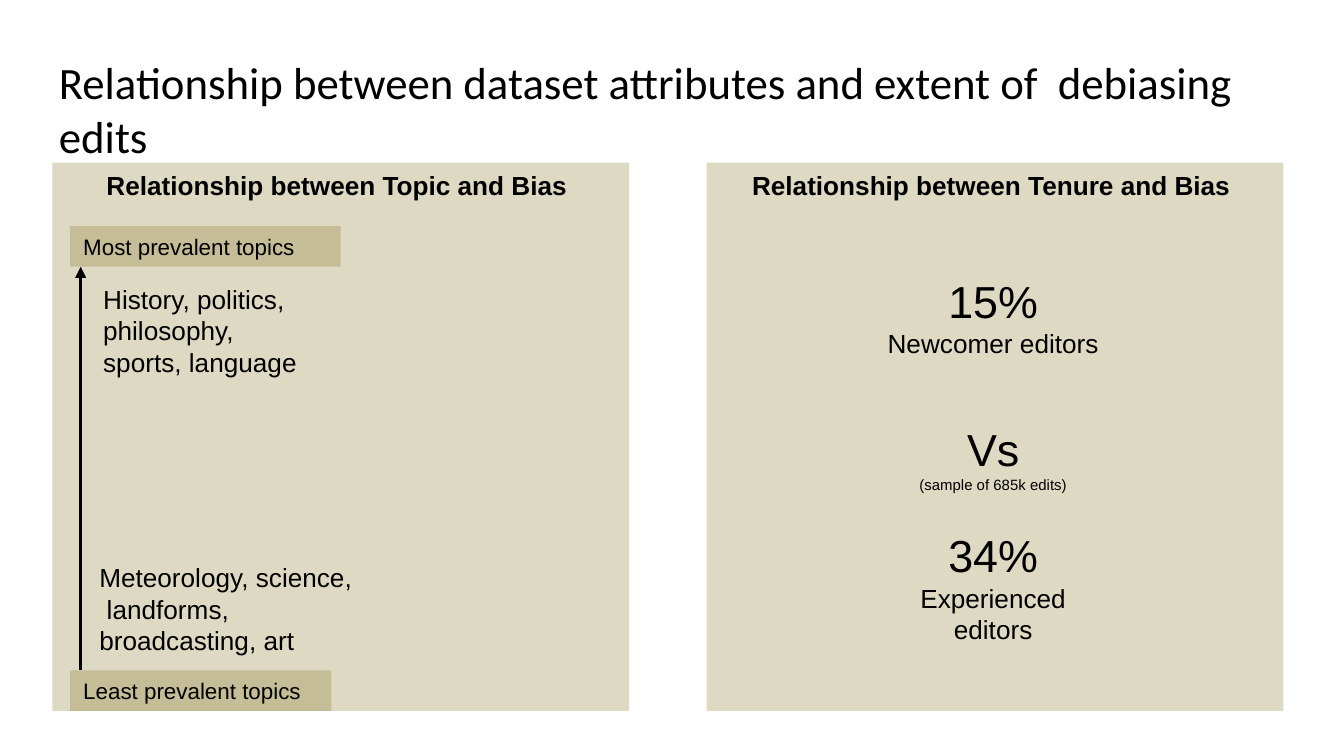
from dataclasses import dataclass

import pptx
import pptx.dml.color
import pptx.enum.dml
import pptx.enum.shapes
import pptx.enum.text
import pptx.oxml
import pptx.util
from lxml import etree
from pptx.oxml import ns

Pt = pptx.util.Pt
ALIGN = pptx.enum.text.PP_ALIGN
ANCHOR = pptx.enum.text.MSO_ANCHOR


@dataclass(frozen=True)
class Theme:
    ink: str = "000000"
    panel: str = "DDD9C3"
    label: str = "C4BD97"
    title_font: str = "Calibri"
    body_font: str = "Arial"
    large: float = 24
    body: float = 14
    small: float = 12
    note: float = 8


@dataclass(frozen=True)
class Box:
    """A rectangle in points."""
    left: float
    top: float
    width: float
    height: float

    def lengths(self) -> tuple:
        return Pt(self.left), Pt(self.top), Pt(self.width), Pt(self.height)


@dataclass(frozen=True)
class Line:
    text: str
    size: float
    bold: bool = False
    indent: float = 0


@dataclass(frozen=True)
class Block:
    box: Box
    lines: tuple[Line, ...]
    fill: str | None = None
    align: ALIGN = ALIGN.LEFT


THEME = Theme()
PANEL_TOP, PANEL_WIDTH, PANEL_HEIGHT = 87.12, 309, 293.76
TOPIC_LEFT, TENURE_LEFT = 28, 378.5
LABEL_LEFT, LABEL_HEIGHT = 37.5, 21.8
MOST_TOP = 121.1
LEAST_TOP = PANEL_TOP + PANEL_HEIGHT - LABEL_HEIGHT
ARROW_X = 43.2


def color(value: str) -> pptx.dml.color.RGBColor:
    return pptx.dml.color.RGBColor.from_string(value)


def write(frame, lines: tuple[Line, ...], align: ALIGN, font: str) -> None:
    frame.word_wrap = True
    for index, line in enumerate(lines):
        paragraph = frame.paragraphs[0] if index == 0 else frame.add_paragraph()
        paragraph.text = line.text
        paragraph.alignment = align
        if line.indent:
            paragraph._p.get_or_add_pPr().set("marL", str(Pt(line.indent)))
        paragraph.font.name = font
        paragraph.font.size = Pt(line.size)
        paragraph.font.bold = line.bold
        paragraph.font.color.rgb = color(THEME.ink)


def add_block(slide, block: Block):
    """Draw text, on a filled rectangle if the block has a fill."""
    if block.fill:
        shape = slide.shapes.add_shape(
            pptx.enum.shapes.MSO_SHAPE.RECTANGLE, *block.box.lengths())
        shape.shadow.inherit = False
        shape.fill.solid()
        shape.fill.fore_color.rgb = color(block.fill)
        shape.line.fill.background()
    else:
        shape = slide.shapes.add_textbox(*block.box.lengths())
    shape.text_frame.vertical_anchor = ANCHOR.TOP
    write(shape.text_frame, block.lines, block.align, THEME.body_font)
    return shape


def add_panel(slide, left: float, heading: str) -> None:
    box = Box(left, PANEL_TOP, PANEL_WIDTH, PANEL_HEIGHT)
    panel = add_block(slide, Block(
        box, (Line(heading, THEME.body, bold=True),), THEME.panel, ALIGN.CENTER))
    panel.text_frame.margin_right = Pt(11)


def add_label(slide, top: float, width: float, text: str) -> None:
    add_block(slide, Block(Box(LABEL_LEFT, top, width, LABEL_HEIGHT),
                           (Line(text, THEME.small),), THEME.label))


def add_figure(slide, top: float, height: float, figure: str, caption: Line) -> None:
    add_block(slide, Block(Box(463.7, top, 136.8, height),
                           (Line(figure, THEME.large), caption),
                           align=ALIGN.CENTER))


def add_arrow(slide, x: float, start: float, end: float) -> None:
    arrow = slide.shapes.add_connector(
        pptx.enum.shapes.MSO_CONNECTOR.STRAIGHT, Pt(x), Pt(start), Pt(x), Pt(end))
    arrow.line.color.rgb = color(THEME.ink)
    arrow.line.width = Pt(1.5)
    etree.SubElement(arrow.line._get_or_add_ln(), ns.qn("a:tailEnd"), type="triangle")
    etree.SubElement(arrow._element.spPr, ns.qn("a:effectLst"))


def add_title(slide, text: str) -> None:
    title = slide.shapes.add_textbox(*Box(24.5, 35.3, 671, 45.4).lengths())
    frame = title.text_frame
    frame.margin_left = frame.margin_right = Pt(7.2)
    frame.margin_top = frame.margin_bottom = Pt(7.2)
    frame.vertical_anchor = ANCHOR.MIDDLE
    write(frame, (Line(text, THEME.large),), ALIGN.LEFT, THEME.title_font)


def main() -> None:
    presentation = pptx.Presentation()
    presentation.slide_width, presentation.slide_height = Pt(720), Pt(405)
    slide = presentation.slides.add_slide(presentation.slide_layouts[6])

    add_panel(slide, TOPIC_LEFT, "Relationship between Topic and Bias")
    add_title(slide, "Relationship between dataset attributes and extent of  debiasing edits")
    add_arrow(slide, ARROW_X, LEAST_TOP, MOST_TOP + LABEL_HEIGHT)
    add_label(slide, LEAST_TOP, 140, "Least prevalent topics")
    add_label(slide, MOST_TOP, 145, "Most prevalent topics")
    add_block(slide, Block(Box(48.2, 148.3, 283.7, 58.3), (
        Line("History, politics,", THEME.body),
        Line("philosophy,", THEME.body),
        Line("sports, language", THEME.body))))
    add_block(slide, Block(Box(46.1, 297.4, 151.9, 58.3), (
        Line("Meteorology, science,", THEME.body),
        Line("landforms,", THEME.body, indent=4),
        Line("broadcasting, art", THEME.body))))

    add_panel(slide, TENURE_LEFT, "Relationship between Tenure and Bias")
    add_figure(slide, 143.3, 53.3, "15%", Line("Newcomer editors", THEME.body))
    add_figure(slide, 279.4, 70.6, "34%", Line("Experienced editors", THEME.body))
    add_figure(slide, 222.5, 46, "Vs", Line("(sample of 685k edits)", THEME.note))

    presentation.save("out.pptx")


if __name__ == "__main__":
    main()
